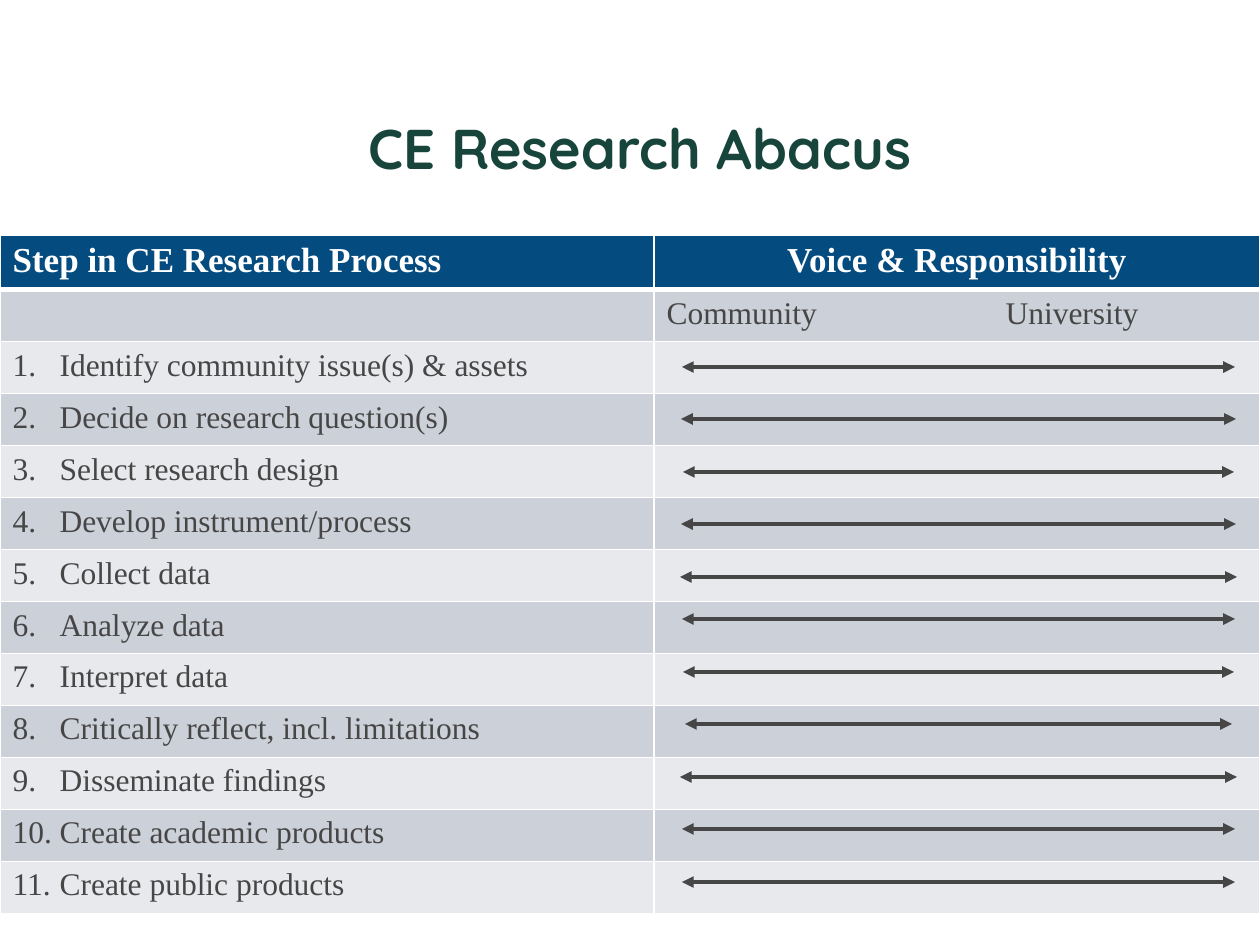
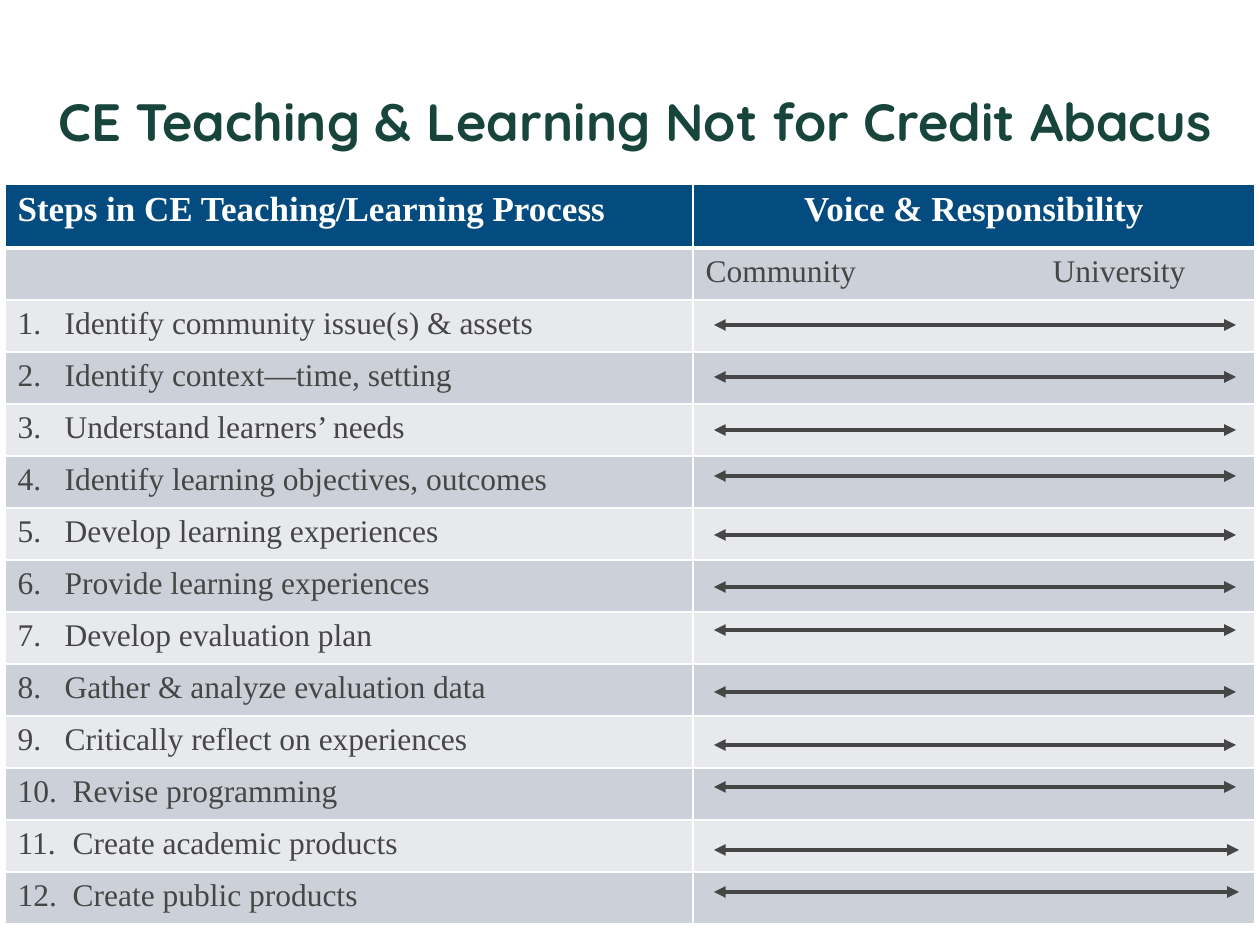
from lxml import etree
from pptx import Presentation
from pptx.dml.color import RGBColor
from pptx.enum.shapes import MSO_CONNECTOR
from pptx.enum.text import MSO_ANCHOR, PP_ALIGN
from pptx.oxml.ns import qn
from pptx.util import Emu, Pt

LEFT, CENTER = PP_ALIGN.LEFT, PP_ALIGN.CENTER
MIDDLE = MSO_ANCHOR.MIDDLE
STRAIGHT = MSO_CONNECTOR.STRAIGHT

PX_PER_INCH = 126
ROW_HEIGHT = 52
COLORS = {
    "white": "FFFFFF",
    "green": "18453B",
    "navy": "044C7F",
    "ink": "464646",
    "band_dark": "CCD0D8",
    "band_light": "E7E9EC",
}
TITLE_FONT, BODY_FONT = "Quicksand", "Times New Roman"


def px(length):
    return Emu(round(length * 914400 / PX_PER_INCH))


def color(name):
    return RGBColor.from_string(COLORS[name])


def write_text(frame, text, size=18, font=BODY_FONT, ink="ink", bold=False,
               align=LEFT, tab=None):
    para = frame.paragraphs[0]
    para.alignment = align
    if tab:
        tabs = etree.SubElement(para._p.get_or_add_pPr(), qn("a:tabLst"))
        etree.SubElement(tabs, qn("a:tab"), pos=str(px(tab)), algn="l")
    span = para.add_run()
    span.text = text
    span.font.size = Pt(size)
    span.font.name = font
    span.font.bold = bold
    span.font.color.rgb = color(ink)


class AbacusDeck:
    def __init__(self):
        self.deck = Presentation()
        self.deck.slide_width, self.deck.slide_height = px(1260), px(945)
        self.page = None

    def add_page(self):
        self.page = self.deck.slides.add_slide(self.deck.slide_layouts[6])
        self.page.background.fill.solid()
        self.page.background.fill.fore_color.rgb = color("white")

    def title(self, text, place, size):
        box = self.page.shapes.add_textbox(*map(px, place))
        box.text_frame.word_wrap = True
        box.text_frame.vertical_anchor = MIDDLE
        write_text(box.text_frame, text, size=size, font=TITLE_FONT,
                   ink="green", bold=True, align=CENTER)

    def style_cell(self, cell, fill, top=1, bottom=1):
        props = cell._tc.get_or_add_tcPr()
        for side, width in (("L", 1), ("R", 1), ("T", top), ("B", bottom)):
            line = etree.SubElement(props, qn(f"a:ln{side}"), w=str(Pt(width)))
            solid = etree.SubElement(line, qn("a:solidFill"))
            etree.SubElement(solid, qn("a:srgbClr"), val=COLORS["white"])
        cell.fill.solid()
        cell.fill.fore_color.rgb = color(fill)

    def step_table(self, heading, steps, corner, columns, header_height,
                   university_tab, long_number_tab):
        row_count = len(steps) + 2
        height = header_height + ROW_HEIGHT * (row_count - 1)
        table = self.page.shapes.add_table(
            row_count, 2, *map(px, (*corner, sum(columns), height))).table
        table.first_row = table.horz_banding = False
        for column, width in zip(table.columns, columns):
            column.width = px(width)
        for index, row in enumerate(table.rows):
            row.height = px(ROW_HEIGHT if index else header_height)
            band = "band_dark" if index % 2 else "band_light"
            for cell in row.cells:
                self.style_cell(cell, band if index else "navy",
                                top=3 if index == 1 else 1,
                                bottom=1 if index else 3)
        header = {"size": 20, "ink": "white", "bold": True}
        write_text(table.cell(0, 0).text_frame, heading, **header)
        write_text(table.cell(0, 1).text_frame, "Voice & Responsibility",
                   align=CENTER, **header)
        write_text(table.cell(1, 1).text_frame, "Community\tUniversity",
                   tab=university_tab)
        for number, step in enumerate(steps, 1):
            write_text(table.cell(number + 1, 0).text_frame,
                       f"{number}.\t{step}",
                       tab=47 if number < 10 else long_number_tab)

    def arrow(self, left, right, y):
        line = self.page.shapes.add_connector(
            STRAIGHT, *map(px, (left, y, right, y)))
        line.line.width = Pt(2.25)
        line.line.color.rgb = color("ink")
        stroke = line.line._get_or_add_ln()
        for end in ("headEnd", "tailEnd"):
            etree.SubElement(stroke, qn(f"a:{end}"), type="triangle")
        etree.SubElement(line._element.spPr, qn("a:effectLst"))

    def arrows(self, spans, first_y, lifts):
        for index, (left, right) in enumerate(spans):
            y = first_y + index * 105 // 2 - lifts.get(index, 0)
            self.arrow(left, right, y)


def research_page(abacus):
    steps = [
        "Identify community issue(s) & assets", "Decide on research question(s)",
        "Select research design", "Develop instrument/process", "Collect data",
        "Analyze data", "Interpret data", "Critically reflect, incl. limitations",
        "Disseminate findings", "Create academic products",
        "Create public products",
    ]
    insets = [0, -1, 1, -1, -2, 0, 1, 3, -2, 0, 0]
    abacus.add_page()
    abacus.title("CE Research Abacus", (73, 105, 1134, 84), 32)
    abacus.step_table("Step in CE Research Process", steps, (0, 235), (654, 606),
                      54, university_tab=339, long_number_tab=47)
    abacus.arrows([(682 + inset, 1235 - inset) for inset in insets], 367,
                  {index: 10 for index in range(5, len(steps))})


def teaching_page(abacus):
    steps = [
        "Identify community issue(s) & assets", "Identify context—time, setting",
        "Understand learners’ needs", "Identify learning objectives, outcomes",
        "Develop learning experiences", "Provide learning experiences",
        "Develop evaluation plan", "Gather & analyze evaluation data",
        "Critically reflect on experiences", "Revise programming",
        "Create academic products", "Create public products",
    ]
    abacus.add_page()
    abacus.title("CE Teaching & Learning Not for Credit Abacus",
                 (21, 63, 1229, 116), 30)
    abacus.step_table("Steps in CE Teaching/Learning Process", steps, (5, 184),
                      (688, 562), 64, university_tab=347, long_number_tab=55)
    abacus.arrows([(714, 1236)] * 10 + [(714, 1239)] * 2, 325,
                  {3: 6, 6: 10, 9: 10, 11: 10})


def main():
    abacus = AbacusDeck()
    research_page(abacus)
    teaching_page(abacus)
    abacus.deck.save("out.pptx")


if __name__ == "__main__":
    main()
